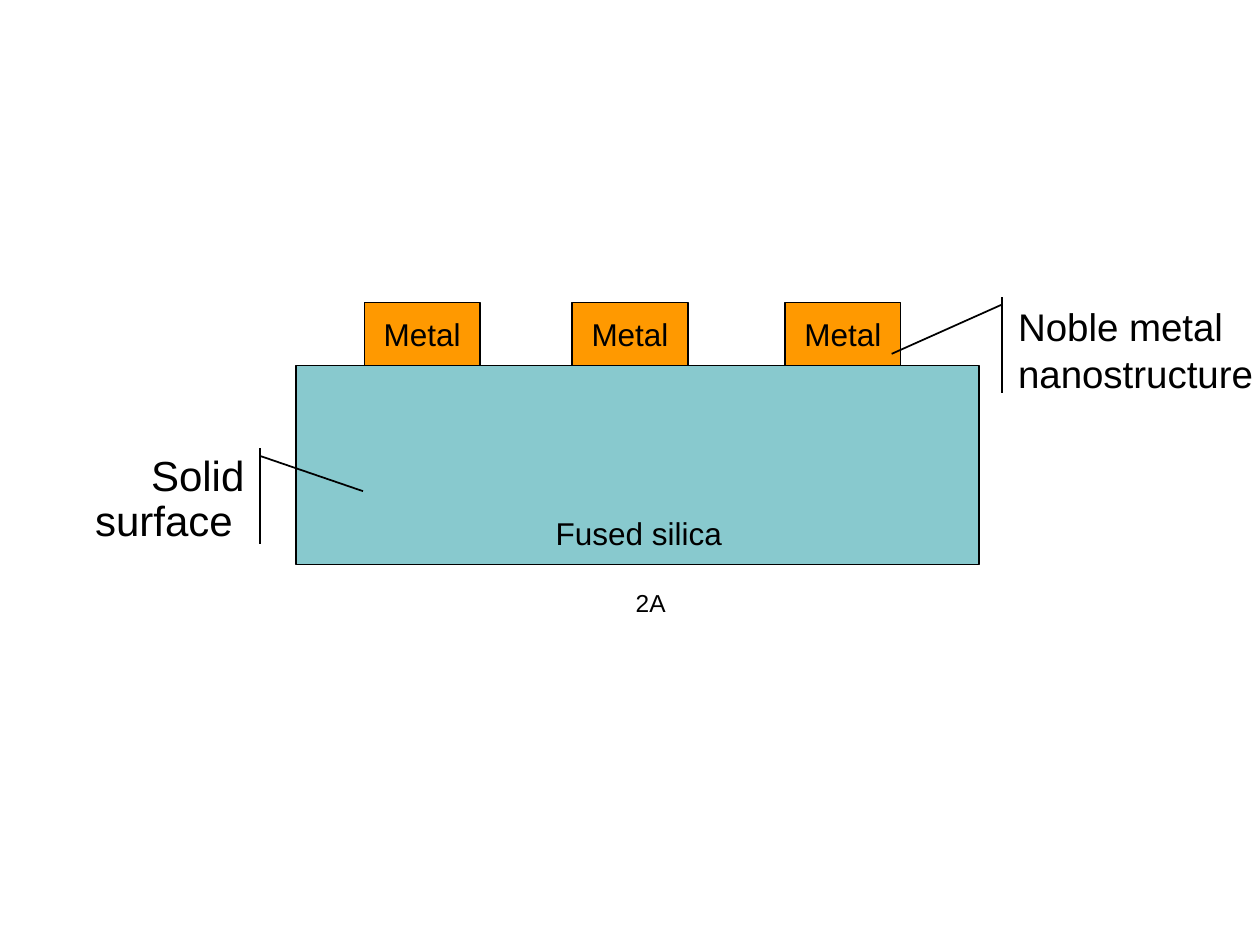
import pptx
import pptx.dml.color
import pptx.enum.shapes
import pptx.enum.text
import pptx.util

Pt = pptx.util.Pt
RGB = pptx.dml.color.RGBColor
KIND = pptx.enum.shapes.MSO_SHAPE
ALIGN = pptx.enum.text.PP_ALIGN
ANCHOR = pptx.enum.text.MSO_ANCHOR

BLACK = RGB(0x00, 0x00, 0x00)
ORANGE = RGB(0xFF, 0x99, 0x00)
TEAL = RGB(0x88, 0xC9, 0xCE)

METAL_TOP, METAL_W, METAL_H = 172.8, 66.24, 36
METAL_LEFTS = (208.08, 326.88, 448.56)


def write(shape, text, size=18, align=ALIGN.CENTER, anchor=ANCHOR.TOP,
          wrap=True, side=7.2, space=None):
    """Fill a shape with text, one paragraph a line; side is the side inset."""
    frame = shape.text_frame
    frame.word_wrap = wrap
    frame.vertical_anchor = anchor
    frame.margin_left = frame.margin_right = Pt(side)
    frame.margin_top = frame.margin_bottom = Pt(3.6)
    frame.text = text
    for para in frame.paragraphs:
        para.alignment = align
        if space:
            para.line_spacing = space
        for run in para.runs:
            run.font.name = "Arial"
            run.font.size = Pt(size)
            run.font.color.rgb = BLACK


def draw(shapes, kind, box, fill=None, line=0.75):
    shape = shapes.add_shape(kind, *map(Pt, box))
    shape.shadow.inherit = False
    if fill is None:
        shape.fill.background()
    else:
        shape.fill.solid()
        shape.fill.fore_color.rgb = fill
    shape.line.color.rgb = BLACK
    shape.line.width = Pt(line)
    return shape


def metal(shapes, left):
    block = draw(shapes, KIND.RECTANGLE,
                 (left, METAL_TOP, METAL_W, METAL_H), ORANGE)
    write(block, "Metal", anchor=ANCHOR.MIDDLE, wrap=False)


def callout(shapes, box, tail, text, **style):
    """Add an accent bar callout; tail holds y, x of its start and end."""
    note = draw(shapes, KIND.LINE_CALLOUT_1_ACCENT_BAR, box, line=1)
    for i, value in enumerate(tail):
        note.adjustments[i] = value
    write(note, text, side=2.88, **style)


def label(shapes, box, text, **style):
    write(shapes.add_textbox(*map(Pt, box)), text, **style)


def main():
    deck = pptx.Presentation()
    deck.slide_width, deck.slide_height = Pt(720), Pt(540)
    slide = deck.slides.add_slide(deck.slide_layouts[6])
    model = slide.shapes.add_group_shape().shapes

    for left in METAL_LEFTS:
        metal(model, left)
    callout(model, (578.88, 169.92, 154.08, 54.72),
            (0.075, -0.04, 0.591, -0.45),
            "Noble metal\nnanostructure", size=22, align=ALIGN.LEFT)
    draw(model, KIND.RECTANGLE, (169.2, 208.8, 390.24, 113.76), TEAL)
    callout(model, (13.68, 256.32, 128.88, 54.72),
            (0.079, 1.048, 0.446, 1.503),
            "Solid\n surface ", size=24, align=ALIGN.RIGHT, space=0.9)
    label(model, (174.96, 290.16, 380.16, 28.8), "Fused silica")
    label(slide.shapes, (354.96, 332.64, 33.84, 22.32), "2A",
          size=14, side=0)

    deck.save("out.pptx")


if __name__ == "__main__":
    main()
